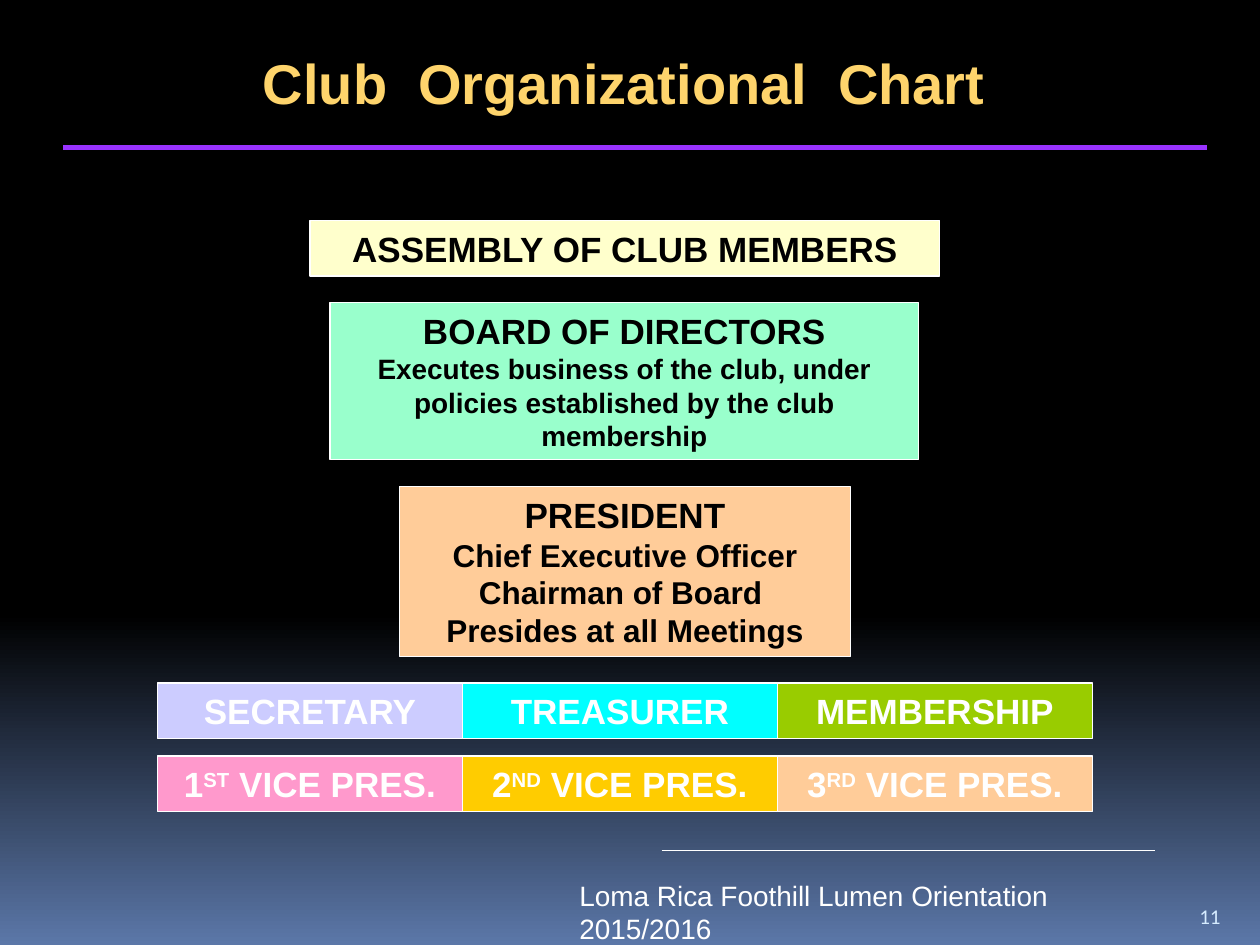
from lxml import etree
from pptx import Presentation
from pptx.dml.color import RGBColor
from pptx.enum.shapes import MSO_CONNECTOR, MSO_SHAPE
from pptx.enum.text import MSO_ANCHOR, MSO_AUTO_SIZE, PP_ALIGN
from pptx.oxml.ns import qn
from pptx.util import Inches, Pt

RECTANGLE = MSO_SHAPE.RECTANGLE
STRAIGHT = MSO_CONNECTOR.STRAIGHT
CENTER, LEFT = PP_ALIGN.CENTER, PP_ALIGN.LEFT
MIDDLE, TOP, BOTTOM = MSO_ANCHOR.MIDDLE, MSO_ANCHOR.TOP, MSO_ANCHOR.BOTTOM
TITLE_ONLY = 5


def color(value):
    return RGBColor.from_string(value)


def format_text(shape, sizes, text_color, bold=True, align=CENTER, anchor=MIDDLE, font="Arial"):
    text_frame = shape.text_frame
    text_frame.word_wrap = True
    text_frame.auto_size = MSO_AUTO_SIZE.NONE
    text_frame.vertical_anchor = anchor
    for paragraph, size in zip(text_frame.paragraphs, sizes):
        paragraph.alignment = align
        for run in paragraph.runs:
            run.font.name = font
            run.font.size = Pt(size)
            run.font.bold = bold
            run.font.color.rgb = color(text_color)


presentation = Presentation()
presentation.slide_width = Inches(10)
presentation.slide_height = Inches(7.5)
slide = presentation.slides.add_slide(presentation.slide_layouts[TITLE_ONLY])

background = slide.background.fill
background.gradient()
background.gradient_angle = 270
for stop, position, value in zip(background.gradient_stops, (0.65, 1), ("000000", "5B77A8")):
    stop.position = position
    stop.color.rgb = color(value)

title = slide.shapes.title
title.left, title.top = Inches(0.58), Inches(0.33)
title.width, title.height = Inches(8.75), Inches(0.64)
title.text_frame.text = "Club  Organizational  Chart"
format_text(title, [32], "FED46C")

rules = [(0.5, 9.58, 1.17, "9933FF", 3), (5.25, 9.17, 6.75, "FFFFFF", 0.75)]
for start, end, y, value, width in rules:
    rule = slide.shapes.add_connector(STRAIGHT, Inches(start), Inches(y), Inches(end), Inches(y))
    rule.line.color.rgb = color(value)
    rule.line.width = Pt(width)
    etree.SubElement(rule._element.spPr, qn("a:effectLst"))

boxes = [
    (2.46, 1.75, 5, 0.44, "FFFFCC", "000000", ["ASSEMBLY OF CLUB MEMBERS"], [20]),
    (2.62, 2.4, 4.67, 1.25, "99FFCC", "000000",
     ["BOARD OF DIRECTORS",
      "Executes business of the club, under policies established by the club membership"],
     [20, 16]),
    (3.17, 3.86, 3.58, 1.35, "FFCC99", "000000",
     ["PRESIDENT", "Chief Executive Officer Chairman of Board ", "Presides at all Meetings"],
     [20, 18, 18]),
]
officer_rows = [
    (5.42, [("SECRETARY", "CCCCFF"), ("TREASURER", "00FFFF"), ("MEMBERSHIP", "99CC00")]),
    (6, [("1|ST| VICE PRES.", "FF99CC"), ("2|ND| VICE PRES.", "FFCC00"),
         ("3|RD| VICE PRES.", "FFCC99")]),
]
officer_columns = [(1.25, 2.42), (3.67, 2.5), (6.17, 2.5)]
for top, officers in officer_rows:
    for (left, width), (label, fill) in zip(officer_columns, officers):
        boxes.append((left, top, width, 0.44, fill, "FFFFFF", [label], [20]))

for left, top, width, height, fill, text_color, lines, sizes in boxes:
    box = slide.shapes.add_shape(RECTANGLE, Inches(left), Inches(top), Inches(width), Inches(height))
    box.shadow.inherit = False
    box.fill.solid()
    box.fill.fore_color.rgb = color(fill)
    box.line.color.rgb = color("FFFFFF")
    box.line.width = Pt(0.75)
    for index, line in enumerate(lines):
        paragraph = box.text_frame.add_paragraph() if index else box.text_frame.paragraphs[0]
        for part_index, part in enumerate(line.split("|")):
            run = paragraph.add_run()
            run.text = part
            if part_index == 1:
                run.font._element.set("baseline", "30000")
    format_text(box, sizes, text_color)

footer = slide.shapes.add_textbox(Inches(4.5), Inches(6.92), Inches(5), Inches(0.37))
footer.text_frame.text = "Loma Rica Foothill Lumen Orientation 2015/2016"
format_text(footer, [16], "FFFFFF", False, LEFT, TOP)

page_number = slide.shapes.add_textbox(Inches(9.42), Inches(7.02), Inches(0.5), Inches(0.4))
page_number.text_frame.text = "11"
format_text(page_number, [12], "D6ECFF", False, LEFT, BOTTOM, "Calibri")

presentation.save("out.pptx")
